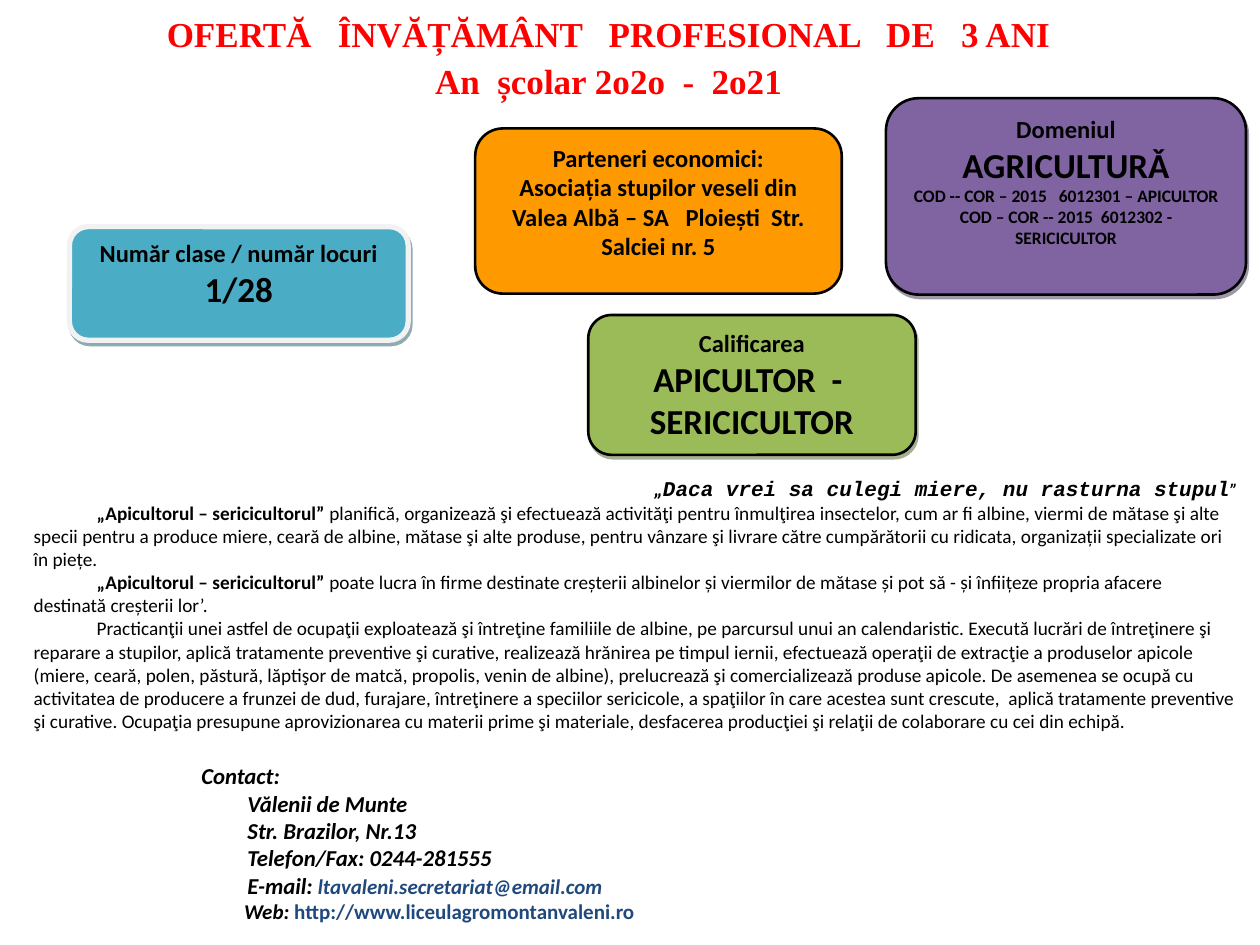
import lxml.etree
import pptx
import pptx.dml.color
import pptx.enum.shapes
import pptx.enum.text
import pptx.oxml.ns
import pptx.util

Cm, Pt = pptx.util.Cm, pptx.util.Pt
ALIGN = pptx.enum.text.PP_ALIGN
COLOURS = {
    "title": "FF0000", "text": "000000", "link": "1F497D", "outline": "000000",
    "pale": "F2F2F2", "green": "9BBB59", "green shadow": "4E6128",
    "teal": "4BACC6", "teal shadow": "205867", "purple": "8064A2",
    "purple shadow": "3F3151", "orange": "FF9900",
}
BOLD = {"bold": True}
SLANTED = {"bold": True, "italic": True}


def rgb(name):
    return pptx.dml.color.RGBColor.from_string(COLOURS[name])


def add_span(para, text, size, colour="text", **formats):
    span = para.add_run()
    span.text = text
    values = {"name": "Calibri", "size": Pt(size), "bold": False, "italic": False}
    for key, value in (values | formats).items():
        setattr(span.font, key, value)
    span.font.color.rgb = rgb(colour)


def fill_text(box, paragraphs):
    """Each paragraph is a dict of formats and a list of (text, size, formats)."""
    frame = box.text_frame
    frame.word_wrap = True
    frame.vertical_anchor = pptx.enum.text.MSO_ANCHOR.TOP
    for number, (formats, spans) in enumerate(paragraphs):
        para = frame.add_paragraph() if number else frame.paragraphs[0]
        for key, value in formats.items():
            if key in ("marL", "indent"):
                para._p.get_or_add_pPr().set(key, str(int(value)))
            else:
                setattr(para, key, value)
        for text, size, span_formats in spans:
            add_span(para, text, size, **span_formats)


def add_text(page, place, paragraphs):
    box = page.shapes.add_textbox(*map(Cm, place))
    fill_text(box, paragraphs)


def add_shadow(box, colour):
    effects = box._element.spPr.find(pptx.oxml.ns.qn("a:effectLst"))
    shadow = lxml.etree.SubElement(
        effects, pptx.oxml.ns.qn("a:outerShdw"),
        dist=str(Pt(2.2)), dir=str(63 * 60000), algn="ctr", rotWithShape="0")
    tint = lxml.etree.SubElement(
        shadow, pptx.oxml.ns.qn("a:srgbClr"), val=COLOURS[colour])
    lxml.etree.SubElement(tint, pptx.oxml.ns.qn("a:alpha"), val="50000")


def add_card(page, place, fill, lines, outline="outline", width=1.5, shadow=True):
    box = page.shapes.add_shape(
        pptx.enum.shapes.MSO_SHAPE.ROUNDED_RECTANGLE, *map(Cm, place))
    box.shadow.inherit = False
    box.fill.solid()
    box.fill.fore_color.rgb = rgb(fill)
    box.line.color.rgb = rgb(outline)
    box.line.width = Pt(width)
    if shadow:
        add_shadow(box, f"{fill} shadow")
    fill_text(box, [({"alignment": ALIGN.CENTER}, [(text, size, BOLD)])
                    for text, size in lines])


def add_title(page):
    look = BOLD | {"name": "Times New Roman", "colour": "title"}
    lines = ["OFERTĂ   ÎNVĂȚĂMÂNT   PROFESIONAL   DE   3 ANI",
             "An  școlar 2o2o  -  2o21"]
    add_text(page, (0.84, 0, 22.86, 2.18), [
        ({"alignment": ALIGN.CENTER, "line_spacing": 1.14}, [(line, 20, look)])
        for line in lines])


def add_contact(page):
    inset = {"marL": Cm(0.93)}
    link = {"bold": True, "colour": "link"}
    address = ["Vălenii de Munte", "Str. Brazilor, Nr.13", "Telefon/Fax: 0244-281555"]
    add_text(page, (3.81, 15.24, 21.59, 3.86), [
        ({}, [("Contact:", 13, SLANTED)]),
        *[(inset, [(line, 13, SLANTED)]) for line in address],
        (inset, [("E-mail: ", 13, SLANTED),
                 ("ltavaleni.secretariat@email.com", 12, link | SLANTED)]),
        ({"marL": Cm(0.86)}, [("Web: ", 12, SLANTED),
                              ("http://www.liceulagromontanvaleni.ro", 12, link)]),
    ])


def add_description(page):
    first_line = {"marL": 0, "indent": Cm(1.27)}
    trade = ("„Apicultorul – sericicultorul”", 11, BOLD)
    add_text(page, (0.43, 9.47, 24.77, 4.93), [
        (first_line | {"alignment": ALIGN.RIGHT}, [
            ("„", 12, SLANTED),
            ("Daca vrei sa culegi miere, nu rasturna stupul", 12,
             SLANTED | {"name": "Courier New"}),
            ("”", 10, SLANTED)]),
        (first_line, [trade, (
            " planifică, organizează şi efectuează activităţi pentru înmulţirea "
            "insectelor, cum ar fi albine, viermi de mătase şi alte specii pentru a "
            "produce miere, ceară de albine, mătase şi alte produse, pentru vânzare "
            "şi livrare către cumpărătorii cu ridicata, organizații specializate ori "
            "în piețe.", 11, {})]),
        (first_line, [trade, (
            " poate lucra în firme destinate creșterii albinelor și viermilor de "
            "mătase și pot să - și înfiițeze propria afacere destinată creșterii "
            "lor’.", 11, {})]),
        (first_line, [(
            "Practicanţii unei astfel de ocupaţii exploatează şi întreţine familiile "
            "de albine, pe parcursul unui an calendaristic. Execută lucrări de "
            "întreţinere şi reparare a stupilor, aplică tratamente preventive şi "
            "curative, realizează hrănirea pe timpul iernii, efectuează operaţii de "
            "extracţie a produselor apicole (miere, ceară, polen, păstură, lăptişor "
            "de matcă, propolis, venin de albine), prelucrează şi comercializează "
            "produse apicole. De asemenea se ocupă cu activitatea de producere a "
            "frunzei de dud, furajare, întreţinere a speciilor sericicole, a "
            "spaţiilor în care acestea sunt crescute,  aplică tratamente preventive "
            "şi curative. Ocupaţia presupune aprovizionarea cu materii prime şi "
            "materiale, desfacerea producţiei şi relaţii de colaborare cu cei din "
            "echipă.", 11, {})]),
    ])


def main():
    deck = pptx.Presentation()
    deck.slide_width, deck.slide_height = Cm(25.4), Cm(19.05)
    page = deck.slides.add_slide(deck.slide_layouts[6])

    # Heading and contact details
    add_title(page)
    add_contact(page)

    # Offer cards
    add_card(page, (11.86, 6.35, 6.6, 2.82), "green", [
        ("Calificarea", 14), ("APICULTOR  -  SERICICULTOR", 20)])
    add_card(page, (1.4, 4.57, 6.83, 2.29), "teal", [
        ("Număr clase / număr locuri", 14), ("1/28", 20)], outline="pale", width=3)
    add_card(page, (17.86, 1.98, 7.26, 3.96), "purple", [
        ("Domeniul", 14), ("AGRICULTURǍ", 20),
        ("COD -- COR – 2015   6012301 – APICULTOR", 10),
        ("COD – COR -- 2015  6012302 - SERICICULTOR", 10)])
    add_card(page, (9.58, 2.59, 7.39, 3.33), "orange", [
        ("Parteneri economici:", 14),
        ("Asociația stupilor veseli din Valea Albă – SA   Ploiești  Str. Salciei nr. 5",
         14)], shadow=False)

    # Motto and description of the trade
    add_description(page)
    deck.save("out.pptx")


if __name__ == "__main__":
    main()
